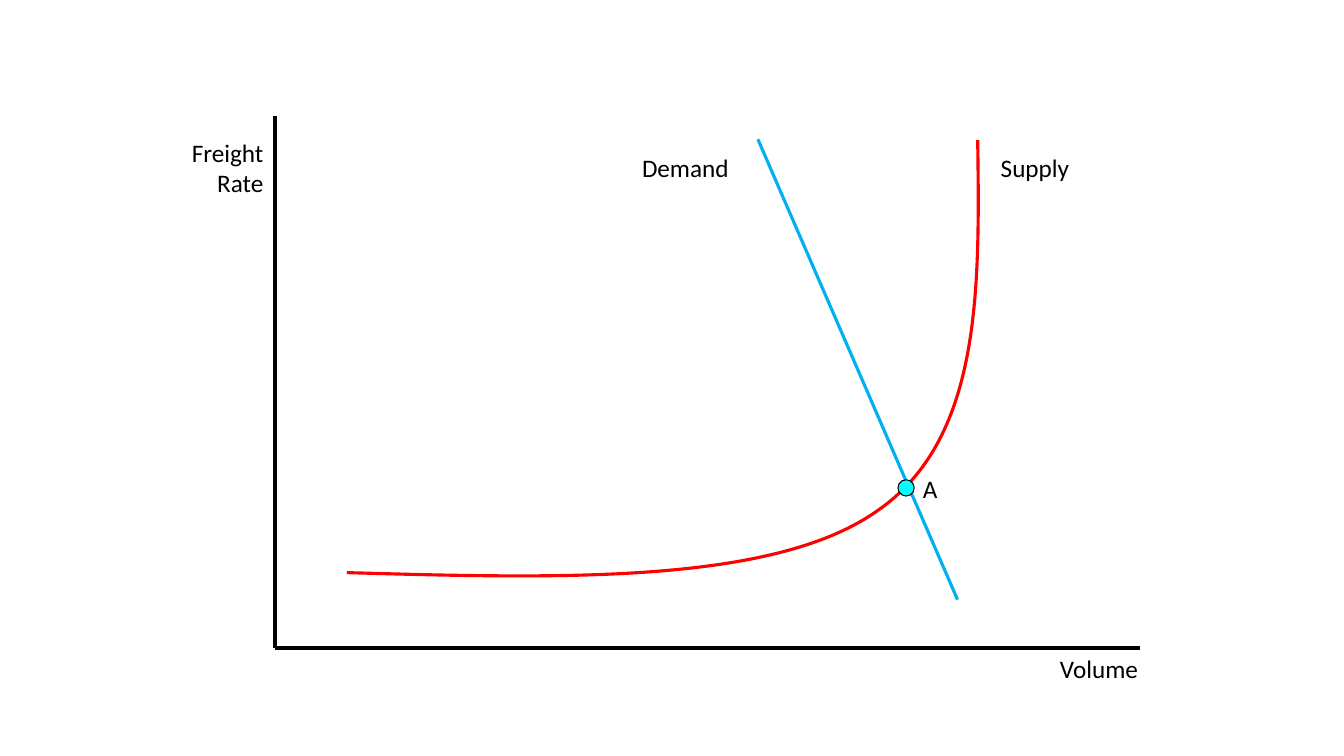
from collections import namedtuple

from lxml import etree
from pptx import Presentation
from pptx.dml.color import RGBColor
from pptx.enum.shapes import MSO_CONNECTOR as Connector, MSO_SHAPE as Shape
from pptx.enum.text import MSO_AUTO_SIZE as AutoSize, PP_ALIGN as Align
from pptx.oxml.ns import qn
from pptx.util import Cm, Pt

COLORS = {
    "ink": "000000",
    "demand": "00B0F0",
    "supply": "FF0000",
    "point": "00FFFF",
}
FONT = "Calibri"
LABEL_HEIGHT = 1.02

Box = namedtuple("Box", "left top width height")


def color(name):
    return RGBColor.from_string(COLORS[name])


def style_line(line, color_name, width):
    line.color.rgb = color(color_name)
    line.width = Pt(width)


def add_line(slide, start, end, color_name, width):
    connector = slide.shapes.add_connector(
        Connector.STRAIGHT, *(Cm(value) for value in (*start, *end)))
    style_line(connector.line, color_name, width)
    etree.SubElement(connector._element.spPr, qn("a:effectLst"))


def add_curve(slide, points, color_name, width):
    """Draw a cubic Bézier path: a start, then three points per segment."""
    start, *others = [(Cm(x), Cm(y)) for x, y in points]
    builder = slide.shapes.build_freeform(*start)
    builder.add_line_segments(others, close=False)
    curve = builder.convert_to_shape()
    curve.shadow.inherit = False
    curve.fill.background()
    style_line(curve.line, color_name, width)

    path = next(curve._element.iter(qn("a:path")))
    segments = path.findall(qn("a:lnTo"))
    for first in range(0, len(segments), 3):
        bezier = etree.SubElement(path, qn("a:cubicBezTo"))
        for segment in segments[first:first + 3]:
            bezier.append(segment[0])
            path.remove(segment)


def add_label(slide, box, lines, align=Align.LEFT):
    label = slide.shapes.add_textbox(*(Cm(value) for value in box))
    frame = label.text_frame
    frame.word_wrap = False
    frame.auto_size = AutoSize.SHAPE_TO_FIT_TEXT
    paragraph = frame.paragraphs[0]
    paragraph.alignment = align
    for index, line in enumerate(lines):
        if index:
            paragraph.add_line_break()
        run = paragraph.add_run()
        run.text = line
        run.font.name = FONT
        run.font.size = Pt(18)
        run.font.color.rgb = color("ink")


def draw_axes(slide, box):
    bottom = box.top + box.height
    right = box.left + box.width
    origin = (box.left, bottom)
    add_line(slide, (box.left, box.top), origin, "ink", 3)
    add_line(slide, origin, (right, bottom), "ink", 3)
    add_label(slide, Box(right - 2.27, bottom, 2.51, LABEL_HEIGHT), ["Volume"])
    add_label(slide, Box(box.left - 2.38, box.top + 0.41, 2.34, 1.8),
              ["Freight", "Rate"], Align.RIGHT)


def draw_curves(slide, box):
    def at(x, y):
        return box.left + x, box.top + y

    add_line(slide, at(12.17, 0.59), at(17.2, 12.19), "demand", 2.25)
    supply = [(1.81, 11.51),
              (7.14, 11.66), (12.5, 11.81), (15.14, 9.98),
              (17.81, 8.18), (17.76, 4.4), (17.71, 0.61)]
    add_curve(slide, [at(*point) for point in supply], "supply", 2.25)

    size = 0.41
    point = slide.shapes.add_shape(
        Shape.OVAL, *(Cm(value) for value in (*at(15.7, 9.17), size, size)))
    point.shadow.inherit = False
    point.fill.solid()
    point.fill.fore_color.rgb = color("point")
    style_line(point.line, "ink", 0.75)

    for text, x, y, width in [("Supply", 18.04, 0.79, 2.26),
                              ("Demand", 9, 0.79, 2.87),
                              ("A", 16.08, 8.87, 0.89)]:
        add_label(slide, Box(*at(x, y), width, LABEL_HEIGHT), [text])


def main():
    presentation = Presentation()
    presentation.slide_width = Cm(33.87)
    presentation.slide_height = Cm(19.05)
    slide = presentation.slides.add_slide(presentation.slide_layouts[6])
    plot = Box(6.93, 2.92, 21.8, 13.41)
    draw_axes(slide, plot)
    draw_curves(slide, plot)
    presentation.save("out.pptx")


if __name__ == "__main__":
    main()
